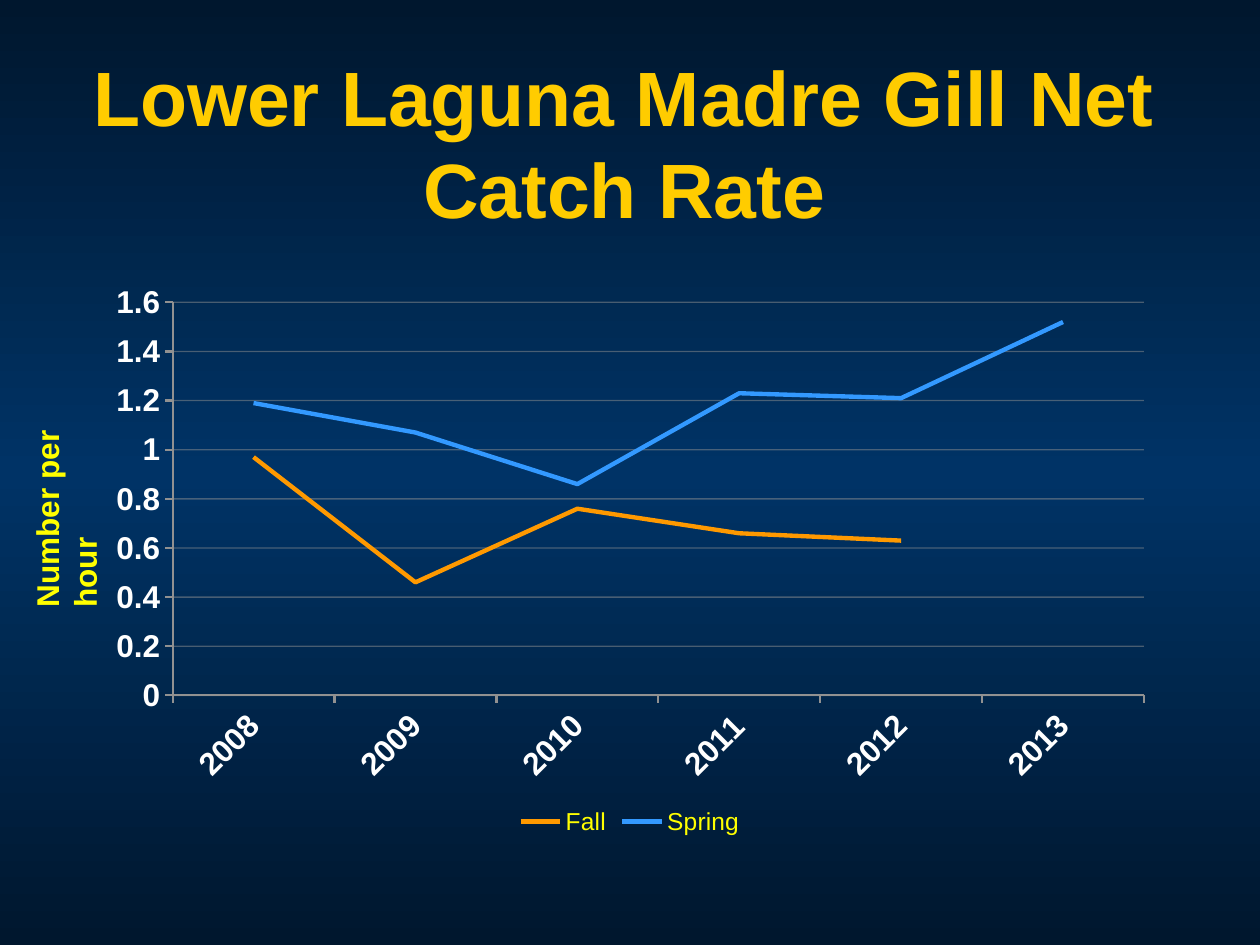
from copy import deepcopy

from lxml.etree import SubElement
from pptx import Presentation
from pptx.chart.data import CategoryChartData
from pptx.dml.color import RGBColor
from pptx.enum.chart import XL_CHART_TYPE as ChartType
from pptx.enum.chart import XL_LEGEND_POSITION as LegendPos
from pptx.enum.chart import XL_MARKER_STYLE as Marker
from pptx.enum.chart import XL_TICK_MARK as Tick
from pptx.enum.text import MSO_ANCHOR as Anchor
from pptx.enum.text import MSO_AUTO_SIZE as AutoSize
from pptx.enum.text import PP_ALIGN as Align
from pptx.oxml import parse_xml
from pptx.oxml.ns import nsdecls, qn
from pptx.util import Inches, Pt


def rgb(value):
    return RGBColor.from_string(value)


class Deck:
    FONT = "Arial"
    GOLD, YELLOW, WHITE, GRAY = "FFCC00", "FFFF00", "FFFFFF", "919191"
    EDGE, MIDDLE = "00172E", "003366"

    def __init__(self, slide):
        self.slide = slide

    def font(self, font, size, color, bold=False):
        font.name = self.FONT
        font.size = Pt(size)
        font.bold = bold
        font.color.rgb = rgb(color)

    def background(self):
        fill = self.slide.background.fill
        fill.gradient()
        fill.gradient_angle = 90
        stops = self.slide.element.find(".//" + qn("a:gsLst"))
        stops.insert(1, deepcopy(stops[0]))
        colors = (self.EDGE, self.MIDDLE, self.EDGE)
        for stop, position, color in zip(fill.gradient_stops, (0, 0.5, 1), colors):
            stop.position = position
            stop.color.rgb = rgb(color)

    def text(self, text, box, size, color, align=Align.LEFT, anchor=Anchor.TOP):
        sp = self.slide.shapes.add_textbox(*map(Inches, box))
        tf = sp.text_frame
        tf.word_wrap = True
        tf.vertical_anchor = anchor
        tf.text = text
        p = tf.paragraphs[0]
        p.alignment = align
        self.font(p.runs[0].font, size, color, True)
        return tf

    def vertical_text(self, text, box, size, color):
        tf = self.text(text, box, size, color)
        tf.auto_size = AutoSize.SHAPE_TO_FIT_TEXT
        tf._txBody.bodyPr.set("vert", "vert270")

    def axis(self, axis):
        axis.major_tick_mark = Tick.OUTSIDE
        axis.minor_tick_mark = Tick.NONE
        axis.format.line.color.rgb = rgb(self.GRAY)
        axis.format.line.width = Pt(1.25)
        self.font(axis.tick_labels.font, 18, self.WHITE, True)

    def gridlines(self, axis):
        axis.has_major_gridlines = True
        line = axis.major_gridlines.format.line
        line.color.rgb = rgb(self.GRAY)
        line.width = Pt(0.75)
        color = axis.major_gridlines._xAx.find(".//" + qn("c:majorGridlines") + "//" + qn("a:srgbClr"))
        SubElement(color, qn("a:alpha"), val="50000")

    def plot_layout(self, chart, box, inner):
        left, top, width, height = box
        x, y, w, h = inner
        area = {"x": (x - left) / width, "y": (y - top) / height, "w": w / width, "h": h / height}
        plot_area = chart._chartSpace.chart.plotArea
        for old in plot_area.findall(qn("c:layout")):
            plot_area.remove(old)
        sizes = "".join(f'<c:{key} val="{value}"/>' for key, value in area.items())
        plot_area.insert(0, parse_xml(
            f'<c:layout {nsdecls("c")}><c:manualLayout><c:layoutTarget val="inner"/>'
            f'<c:xMode val="edge"/><c:yMode val="edge"/>{sizes}</c:manualLayout></c:layout>'))

    def line_chart(self, box, inner, categories, series):
        data = CategoryChartData()
        data.categories = categories
        for name, values, _ in series:
            data.add_series(name, values)
        chart = self.slide.shapes.add_chart(ChartType.LINE, *map(Inches, box), data).chart
        self.font(chart.font, 18, self.YELLOW)
        chart.has_title = False
        chart.has_legend = True
        chart.legend.position = LegendPos.BOTTOM
        chart.legend.include_in_layout = False
        self.font(chart.legend.font, 14, self.YELLOW)

        value_axis, category_axis = chart.value_axis, chart.category_axis
        self.axis(value_axis)
        self.axis(category_axis)
        value_axis.minimum_scale, value_axis.maximum_scale = 0, 1.6
        value_axis.major_unit = 0.2
        value_axis.tick_labels.number_format = "General"
        value_axis.tick_labels.number_format_is_linked = False
        self.gridlines(value_axis)
        body = category_axis._element.find(qn("c:txPr")).find(qn("a:bodyPr"))
        body.set("rot", "-2700000")
        body.set("vert", "horz")

        plot = chart.plots[0]
        plot.vary_by_categories = False
        for line, (_, _, color) in zip(plot.series, series):
            line.smooth = False
            line.marker.style = Marker.NONE
            line.format.line.color.rgb = rgb(color)
            line.format.line.width = Pt(2.5)
        self.plot_layout(chart, box, inner)


def main():
    prs = Presentation()
    prs.slide_width, prs.slide_height = Inches(10), Inches(7.5)
    deck = Deck(prs.slides.add_slide(prs.slide_layouts[6]))
    deck.background()
    deck.text("Lower Laguna Madre Gill Net Catch Rate", (0, 0.5, 9.91, 1.25),
              44, deck.GOLD, Align.CENTER, Anchor.MIDDLE)
    deck.line_chart((0.75, 2.17, 8.5, 4.5), (1.37, 2.4, 7.71, 3.12), range(2008, 2014), [
        ("Fall", (0.97, 0.46, 0.76, 0.66, 0.63, None), "FF9900"),
        ("Spring", (1.19, 1.07, 0.86, 1.23, 1.21, 1.52), "3399FF"),
    ])
    deck.vertical_text("Number per hour", (0.17, 2.75, 0.5, 2.17), 18, deck.YELLOW)
    prs.save("out.pptx")


if __name__ == "__main__":
    main()
